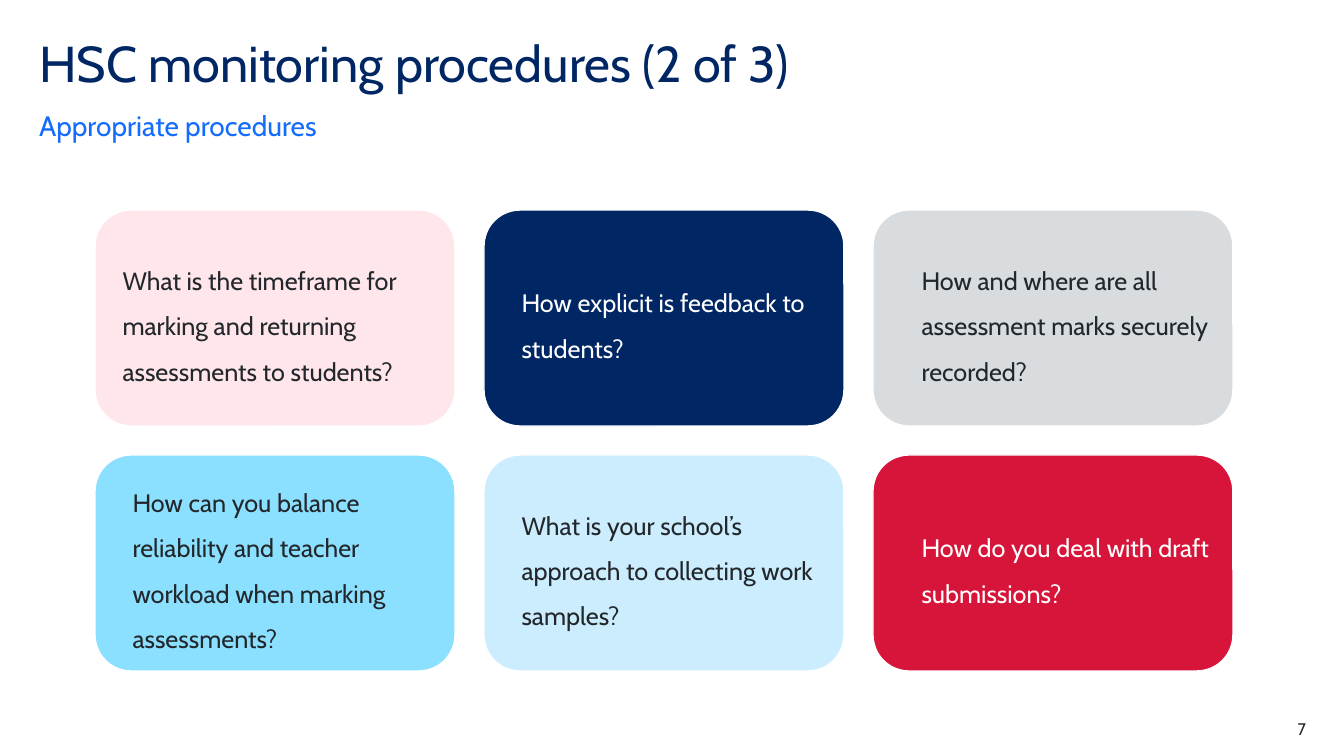
from pptx import Presentation
from pptx.dml.color import RGBColor
from pptx.enum.shapes import MSO_SHAPE as SHAPE
from pptx.enum.text import MSO_ANCHOR as ANCHOR, PP_ALIGN as ALIGN
from pptx.util import Pt

NAVY = RGBColor(0x00, 0x26, 0x64)
BLUE = RGBColor(0x14, 0x6C, 0xFD)
INK = RGBColor(0x22, 0x27, 0x2B)
WHITE = RGBColor(0xFF, 0xFF, 0xFF)
PINK = RGBColor(0xFF, 0xE6, 0xEA)
GREY = RGBColor(0xD9, 0xDC, 0xDE)
SKY = RGBColor(0x8C, 0xE0, 0xFF)
PALE = RGBColor(0xCB, 0xED, 0xFD)
RED = RGBColor(0xD7, 0x15, 0x3A)

CARDS = [
    ("What is the timeframe for marking and returning assessments to students?", PINK, INK, 9),
    ("How explicit is feedback to students?", NAVY, WHITE, 19),
    ("How and where are all assessment marks securely recorded?", GREY, INK, 30),
    ("How can you balance reliability and teacher workload when marking assessments?", SKY, INK, 19),
    ("What is your school’s approach to collecting work samples?", PALE, INK, 19),
    ("How do you deal with draft submissions?", RED, WHITE, 30),
]
COLUMNS = 3
CARD_W, CARD_H = 360, 216
STEP_X, STEP_Y = 389, 245
LEFT, TOP = 95, 210


def px(n):
    return round(n * 914400 / 100.8)


class Deck:
    """Holds the font, the presentation and the current slide."""

    font = "Cabin"

    def __init__(self):
        self.prs = Presentation()
        self.prs.slide_width, self.prs.slide_height = px(1344), px(756)
        self.s = self.prs.slides.add_slide(self.prs.slide_layouts[6])

    def set_text(self, sp, text, size, color, inset=0, anchor=ANCHOR.TOP, align=ALIGN.LEFT, spacing=1.0):
        tf = sp.text_frame
        tf.text = text
        tf.word_wrap = True
        tf.vertical_anchor = anchor
        tf.margin_left = tf.margin_right = tf.margin_top = tf.margin_bottom = px(inset)
        p = tf.paragraphs[0]
        p.alignment, p.line_spacing = align, spacing
        font = p.runs[0].font
        font.name, font.size = self.font, Pt(size)
        font.color.rgb = color
        return p

    def label(self, x, y, w, h, text, size, color, **style):
        sp = self.s.shapes.add_textbox(px(x), px(y), px(w), px(h))
        self.set_text(sp, text, size, color, **style)

    def card(self, x, y, text, fill, color, indent):
        sp = self.s.shapes.add_shape(SHAPE.ROUNDED_RECTANGLE, px(x), px(y), px(CARD_W), px(CARD_H))
        sp.shadow.inherit = False
        sp.fill.solid()
        sp.fill.fore_color.rgb = fill
        sp.line.color.rgb = WHITE
        sp.line.width = Pt(1)
        p = self.set_text(sp, text, 18, color, inset=8, anchor=ANCHOR.MIDDLE, spacing=1.5)
        pPr = p._p.get_or_add_pPr()
        pPr.set("marL", str(px(indent)))
        pPr.set("indent", "0")


def main():
    deck = Deck()
    deck.label(39, 39, 1111, 60, "HSC monitoring procedures (2 of 3)", 36, NAVY, spacing=0.9)
    deck.label(39, 108, 1111, 34, "Appropriate procedures", 20, BLUE, anchor=ANCHOR.BOTTOM, spacing=1.5)
    for i, card in enumerate(CARDS):
        row, column = divmod(i, COLUMNS)
        deck.card(LEFT + column * STEP_X, TOP + row * STEP_Y, *card)
    deck.label(1227, 719, 79, 20, "7", 12, INK, align=ALIGN.RIGHT)
    deck.prs.save("out.pptx")


if __name__ == "__main__":
    main()
